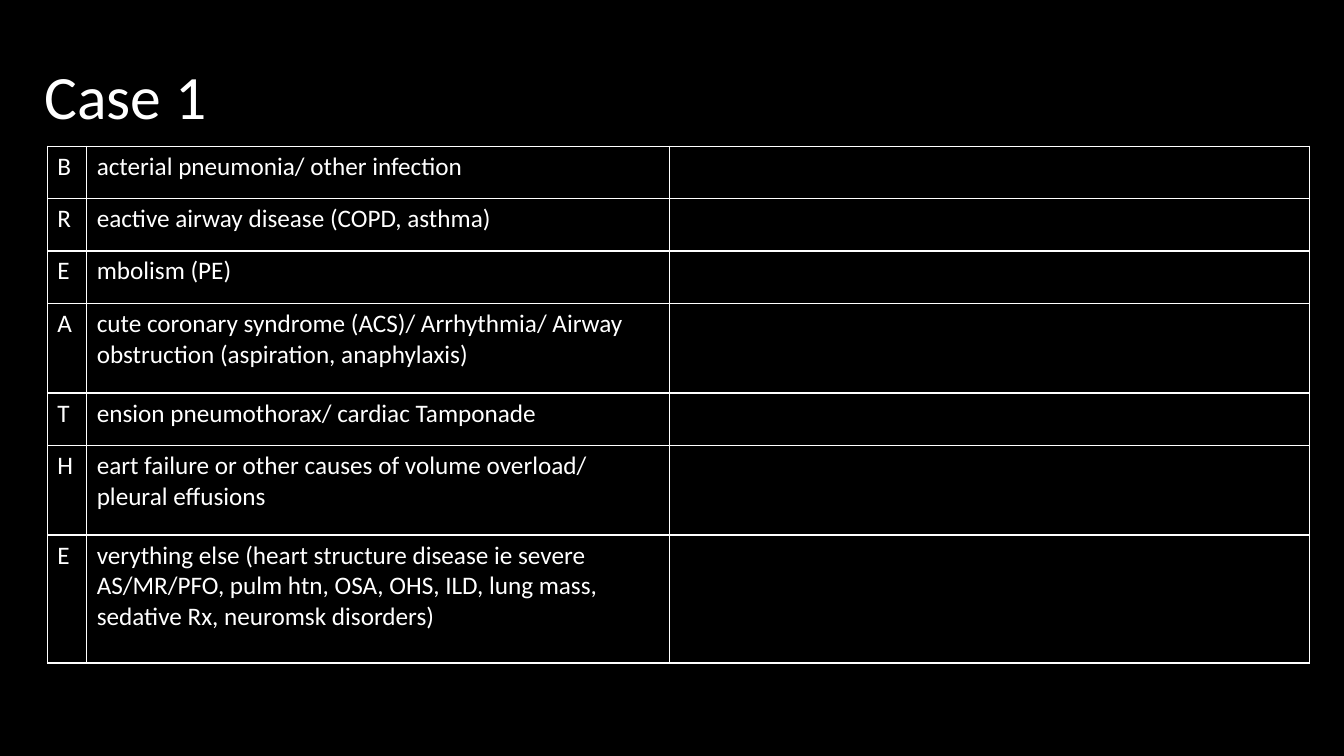
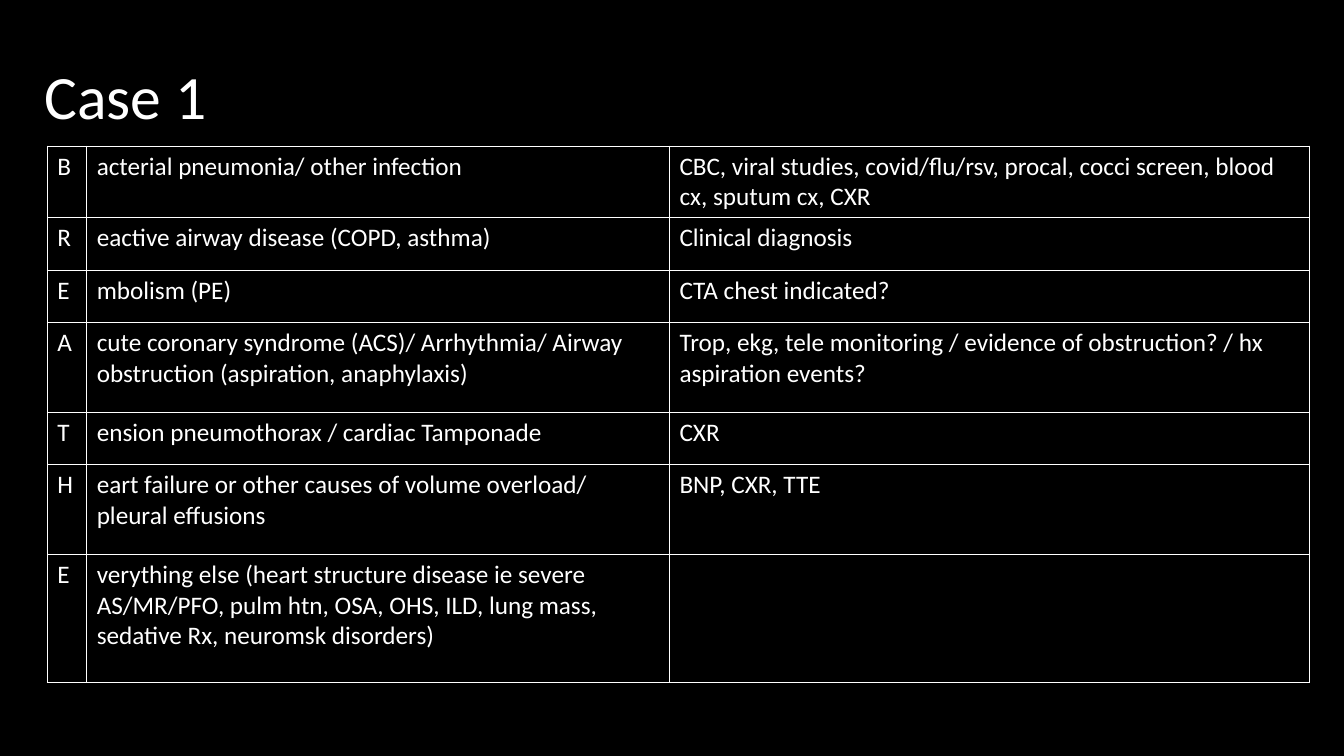
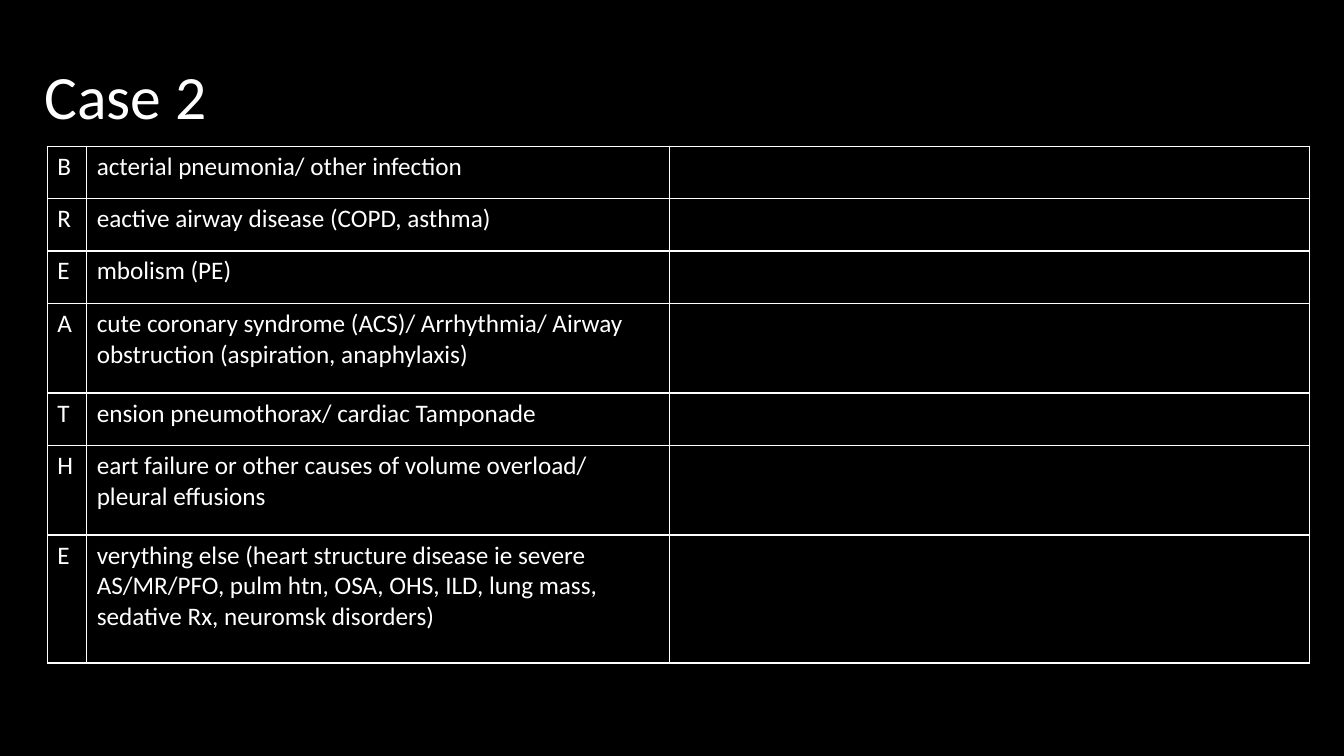
from pptx import Presentation
from pptx.dml.color import RGBColor
from pptx.enum.text import MSO_AUTO_SIZE, MSO_VERTICAL_ANCHOR as Anchor, PP_PARAGRAPH_ALIGNMENT as Align
from pptx.oxml import parse_xml
from pptx.oxml.ns import nsdecls
from pptx.util import Pt

BLACK = RGBColor(0x00, 0x00, 0x00)
WHITE = RGBColor(0xFF, 0xFF, 0xFF)
EMU_PER_PX = 9144
TITLE_ONLY = 5

COLUMNS = [39, 578, 635]
ROWS = [52, 52, 52, 89, 52, 89, 127]
CAUSES = [
    "acterial pneumonia/ other infection",
    "eactive airway disease (COPD, asthma)",
    "mbolism (PE)",
    "cute coronary syndrome (ACS)/ Arrhythmia/ Airway obstruction (aspiration, anaphylaxis)",
    "ension pneumothorax/ cardiac Tamponade",
    "eart failure or other causes of volume overload/ pleural effusions",
    "verything else (heart structure disease ie severe AS/MR/PFO, pulm htn, OSA, OHS, ILD, "
    "lung mass, sedative Rx, neuromsk disorders)",
]
SPACED_CAUSES = [cause.replace("pneumothorax/", "pneumothorax /") for cause in CAUSES]
NO_WORKUP = [""] * len(CAUSES)
WORKUP = [
    "CBC, viral studies, covid/flu/rsv, procal, cocci screen, blood cx, sputum cx, CXR",
    "Clinical diagnosis",
    "CTA chest indicated?",
    "Trop, ekg, tele monitoring / evidence of obstruction? / hx aspiration events?",
    "CXR",
    "BNP, CXR, TTE",
    "",
]
CASES = [
    ("Case 1", CAUSES, NO_WORKUP),
    ("Case 1", SPACED_CAUSES, WORKUP),
    ("Case 2", CAUSES, NO_WORKUP),
]


def px(length):
    return length * EMU_PER_PX


def apply(target, formats):
    for name, value in formats.items():
        setattr(target, name, value)


class CaseDeck:
    """Hold the deck style and the slide being built."""

    title_font = {"name": "Calibri", "size": Pt(44)}
    cell_font = {"name": "Calibri", "size": Pt(18)}
    title_box = {"left": px(34), "top": px(26), "width": px(1150), "height": px(145)}
    title_frame = {"vertical_anchor": Anchor.MIDDLE, "word_wrap": True, "auto_size": MSO_AUTO_SIZE.NONE}
    title_paragraph = {"alignment": Align.LEFT, "line_spacing": 0.9}
    plain_table = {"first_row": False, "horz_banding": False}

    def __init__(self):
        self.presentation = Presentation()
        apply(self.presentation, {"slide_width": px(1333), "slide_height": px(750)})
        background = self.presentation.slide_master.background.fill
        background.solid()
        background.fore_color.rgb = BLACK
        self.slide = None

    def add_slide(self):
        layout = self.presentation.slide_layouts[TITLE_ONLY]
        self.slide = self.presentation.slides.add_slide(layout)

    def set_text(self, paragraph, text, font):
        paragraph.text = text
        apply(paragraph.font, font)
        paragraph.font.color.rgb = WHITE

    def title(self, text):
        shape = self.slide.shapes.title
        apply(shape, self.title_box)
        apply(shape.text_frame, self.title_frame)
        paragraph = shape.text_frame.paragraphs[0]
        self.set_text(paragraph, text, self.title_font)
        apply(paragraph, self.title_paragraph)

    def border(self, cell):
        properties = cell._tc.get_or_add_tcPr()
        for side in "LRTB":
            properties.append(parse_xml(
                f'<a:ln{side} {nsdecls("a")} w="{Pt(1)}"><a:solidFill>'
                f'<a:srgbClr val="{WHITE}"/></a:solidFill></a:ln{side}>'
            ))

    def table(self, left, top, records):
        frame = self.slide.shapes.add_table(
            len(ROWS), len(COLUMNS), px(left), px(top), px(sum(COLUMNS)), px(sum(ROWS))
        )
        table = frame.table
        apply(table, self.plain_table)
        for column, width in zip(table.columns, COLUMNS):
            column.width = px(width)
        for row, height, record in zip(table.rows, ROWS, records):
            row.height = px(height)
            for cell, text in zip(row.cells, record):
                self.border(cell)
                cell.fill.background()
                self.set_text(cell.text_frame.paragraphs[0], text, self.cell_font)


def main():
    deck = CaseDeck()
    for title, causes, workup in CASES:
        deck.add_slide()
        deck.title(title)
        deck.table(47, 145, zip("BREATHE", causes, workup))
    deck.presentation.save("out.pptx")


if __name__ == "__main__":
    main()
